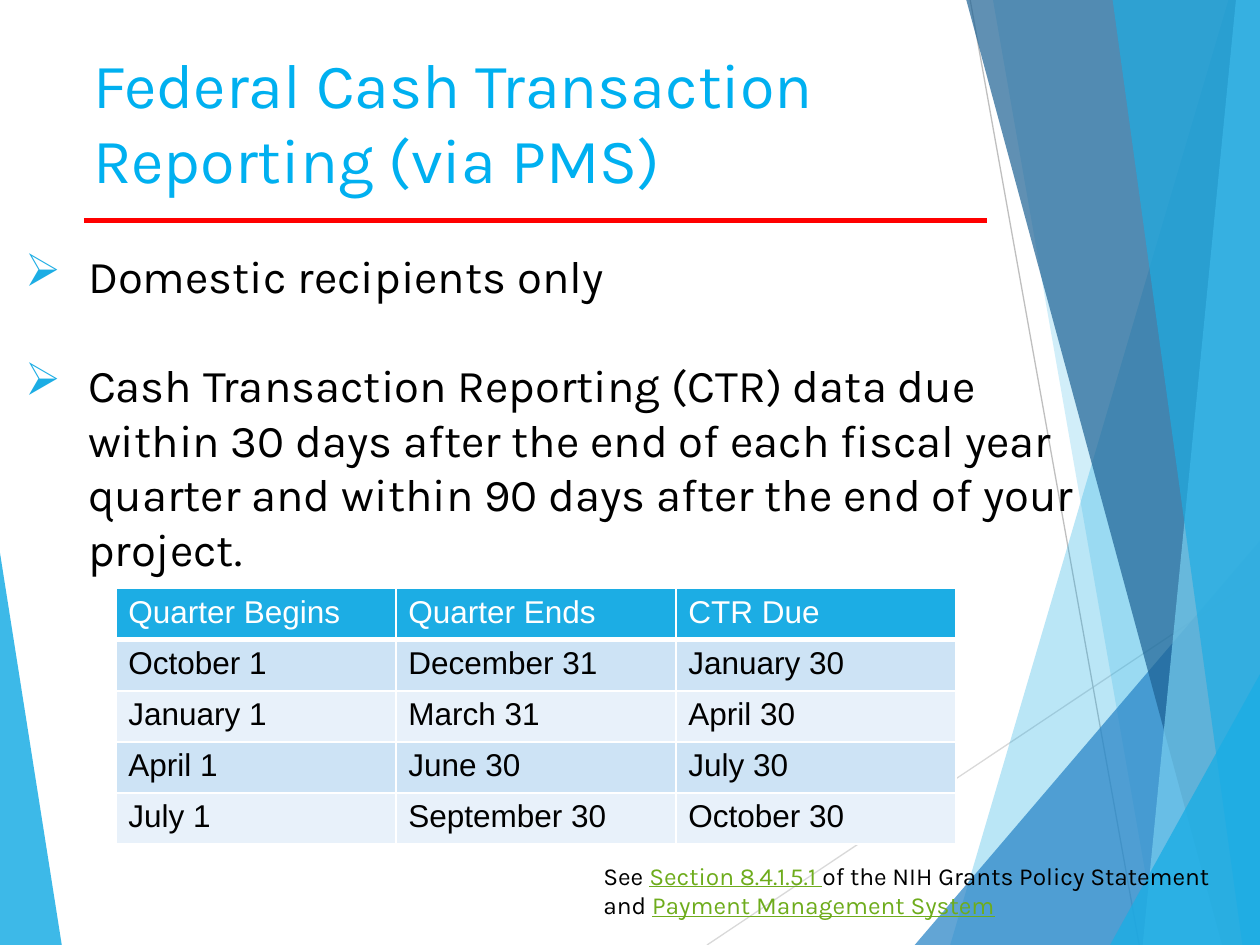
from dataclasses import dataclass

from lxml import etree
from pptx import Presentation
from pptx.dml.color import RGBColor
from pptx.enum.shapes import MSO_CONNECTOR
from pptx.enum.text import MSO_ANCHOR, PP_ALIGN
from pptx.oxml.ns import qn
from pptx.util import Pt

STRAIGHT = MSO_CONNECTOR.STRAIGHT
TOP = MSO_ANCHOR.TOP
LEFT = PP_ALIGN.LEFT
WIDTH, HEIGHT = 720, 540


@dataclass(frozen=True)
class Theme:
    font: str = "Karla"
    table_font: str = "Arial"
    title_size: int = 36
    body_size: int = 26
    table_size: int = 18
    note_size: int = 14
    title: str = "00B0F0"
    text: str = "000000"
    white: str = "FFFFFF"
    accent: str = "1CADE4"
    blue: str = "2683C6"
    navy: str = "1D6294"
    sky: str = "77CEEF"
    link: str = "6EAC1C"
    rule: str = "FF0000"
    light_line: str = "D9D9D9"
    grey_line: str = "BFBFBF"
    bands: tuple = ("CDE3F5", "E8F1FA")


class SlideBuilder:
    def __init__(self, slide, theme):
        self.slide = slide
        self.theme = theme

    def style(self, span, size, color, font=None):
        span.font.name = font or self.theme.font
        span.font.size = Pt(size)
        span.font.color.rgb = RGBColor.from_string(color)

    def facet(self, points, color, opacity):
        corners = [(Pt(x), Pt(y)) for x, y in points]
        builder = self.slide.shapes.build_freeform(*corners[0])
        builder.add_line_segments(corners[1:], close=True)
        shape = builder.convert_to_shape()
        shape.shadow.inherit = False
        shape.line.fill.background()
        shape.fill.solid()
        shape.fill.fore_color.rgb = RGBColor.from_string(color)
        tint = next(shape.fill._xPr.iter(qn("a:srgbClr")))
        etree.SubElement(tint, qn("a:alpha"), val=str(opacity * 1000))

    def line(self, start, end, color, width):
        ends = [Pt(value) for value in (*start, *end)]
        connector = self.slide.shapes.add_connector(STRAIGHT, *ends)
        connector.line.color.rgb = RGBColor.from_string(color)
        connector.line.width = Pt(width)
        etree.SubElement(connector._element.spPr, qn("a:effectLst"))

    def title(self, text, left, top, width, height):
        box = self.slide.shapes.title
        box.left, box.top, box.width, box.height = map(Pt, (left, top, width, height))
        frame = box.text_frame
        frame.text = text
        frame.word_wrap = True
        frame.vertical_anchor = TOP
        para = frame.paragraphs[0]
        para.alignment = LEFT
        self.style(para.runs[0], self.theme.title_size, self.theme.title)

    def text_frame(self, left, top, width, height):
        box = self.slide.shapes.add_textbox(*map(Pt, (left, top, width, height)))
        box.text_frame.word_wrap = True
        return box.text_frame

    def bullets(self, items, *place, gap):
        frame = self.text_frame(*place)
        frame.text = "\n".join(items)
        for index, para in enumerate(frame.paragraphs):
            if index:
                para.space_before = Pt(gap)
            properties = para._p.get_or_add_pPr()
            properties.set("marL", str(Pt(36)))
            properties.set("indent", str(Pt(-36)))
            tint = etree.SubElement(properties, qn("a:buClr"))
            etree.SubElement(tint, qn("a:srgbClr"), val=self.theme.accent)
            etree.SubElement(properties, qn("a:buChar"), char="➢")
            self.style(para.runs[0], self.theme.body_size, self.theme.text)

    def note(self, pieces, *place):
        para = self.text_frame(*place).paragraphs[0]
        for text, linked in pieces:
            span = para.add_run()
            span.text = text
            color = self.theme.link if linked else self.theme.text
            self.style(span, self.theme.note_size, color)
            span.font.underline = linked

    def borders(self, cell, header):
        properties = cell._tc.get_or_add_tcPr()
        for side in ("lnL", "lnR", "lnT", "lnB"):
            width = 3 if header and side == "lnB" else 1
            edge = etree.SubElement(properties, qn(f"a:{side}"), w=str(Pt(width)))
            fill = etree.SubElement(edge, qn("a:solidFill"))
            etree.SubElement(fill, qn("a:srgbClr"), val=self.theme.white)

    def table(self, rows, left, top, column_width, row_height):
        columns = len(rows[0])
        table = self.slide.shapes.add_table(
            len(rows), columns, Pt(left), Pt(top),
            Pt(column_width * columns), Pt(row_height * len(rows)),
        ).table
        for row_index, values in enumerate(rows):
            header = row_index == 0
            fill = self.theme.accent if header else self.theme.bands[(row_index - 1) % 2]
            color = self.theme.white if header else self.theme.text
            for column_index, value in enumerate(values):
                cell = table.cell(row_index, column_index)
                self.borders(cell, header)
                cell.fill.solid()
                cell.fill.fore_color.rgb = RGBColor.from_string(fill)
                cell.text = value
                span = cell.text_frame.paragraphs[0].runs[0]
                self.style(span, self.theme.table_size, color, self.theme.table_font)
                span.font.bold = False


def main():
    deck = Presentation()
    deck.slide_width, deck.slide_height = Pt(WIDTH), Pt(HEIGHT)
    theme = Theme()
    page = SlideBuilder(deck.slides.add_slide(deck.slide_layouts[5]), theme)

    page.facet([(0, 316), (35.3, HEIGHT), (0, HEIGHT)], theme.accent, 85)
    page.line((404, HEIGHT), (WIDTH, 329), theme.light_line, 0.75)
    page.line((554.4, 0), (651, HEIGHT), theme.grey_line, 0.75)

    right_facets = [
        (702, 0, 543, theme.accent, 30),
        (567.4, 0, 661.7, theme.accent, 20),
        (WIDTH, 309, 522.7, theme.blue, 72),
        (552.2, 0, 698.4, theme.navy, 70),
        (706.3, 0, 653, theme.sky, 70),
        (635.8, 0, 710, theme.accent, 65),
        (WIDTH, 385.2, 634.3, theme.accent, 80),
    ]
    for top_x, top_y, bottom_x, color, opacity in right_facets:
        corners = [(top_x, top_y), (bottom_x, HEIGHT), (WIDTH, HEIGHT)]
        if top_x < WIDTH:
            corners.append((WIDTH, top_y))
        page.facet(corners, color, opacity)

    page.bullets(
        [
            "Domestic recipients only",
            "Cash Transaction Reporting (CTR) data due within 30 days after the end "
            "of each fiscal year quarter and within 90 days after the end of your project.",
        ],
        7.2, 138.2, 622.8, 273.6, gap=31.2,
    )
    page.note(
        [
            ("See ", False),
            ("Section 8.4.1.5.1 ", True),
            ("of the NIH Grants Policy Statement and ", False),
            ("Payment Management System", True),
        ],
        337.7, 488.2, 382.3, 41,
    )
    page.table(
        [
            ("Quarter Begins", "Quarter Ends", "CTR Due"),
            ("October 1", "December 31", "January 30"),
            ("January 1", "March 31", "April 30"),
            ("April 1", "June 30", "July 30"),
            ("July 1", "September 30", "October 30"),
        ],
        66.2, 336.4, 160, 29.2,
    )
    page.title("Federal Cash Transaction Reporting (via PMS)", 46, 22.3, 499.7, 103.7)
    page.line((48, 126), (564, 126), theme.rule, 3)
    deck.save("out.pptx")


if __name__ == "__main__":
    main()
